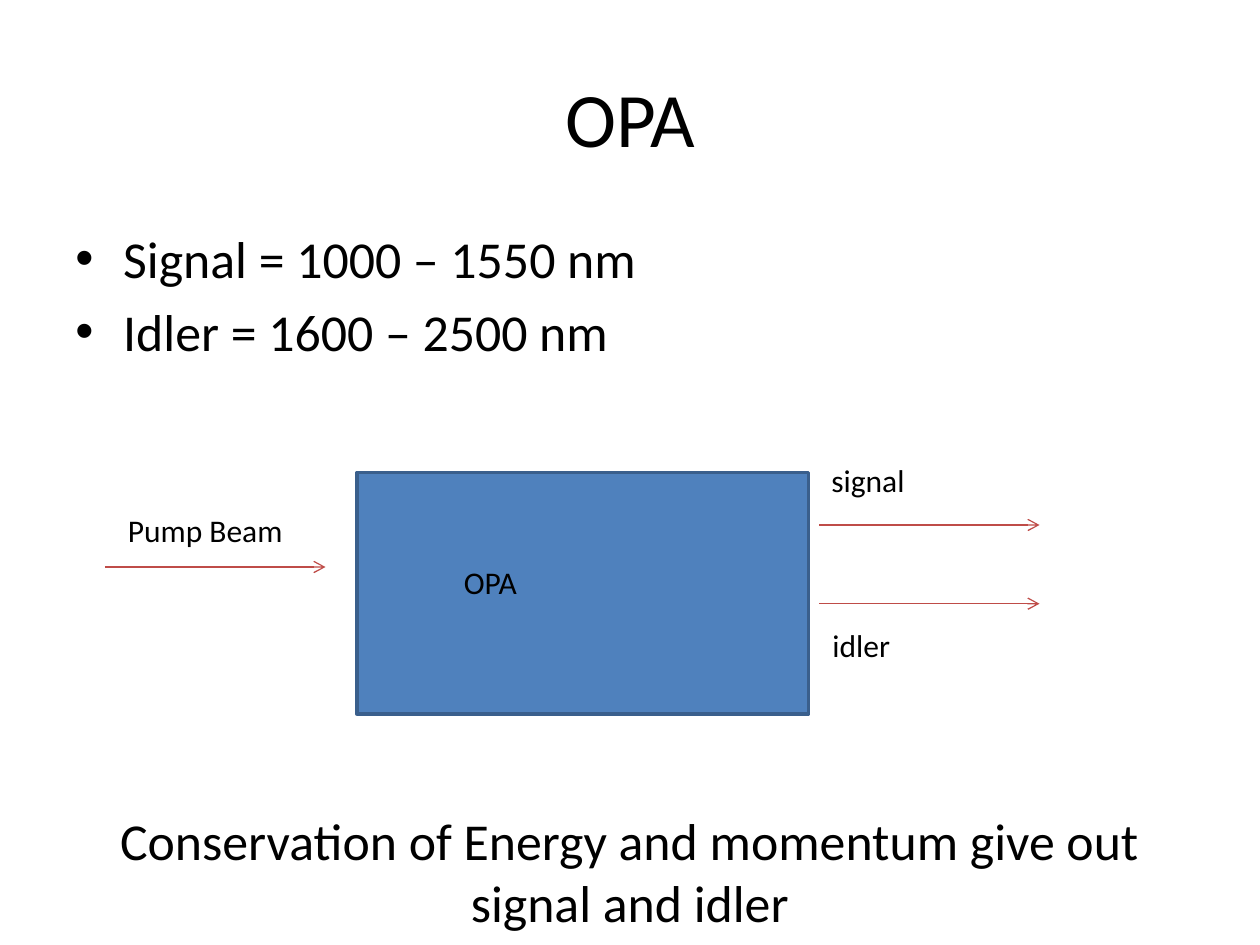
from dataclasses import dataclass

from lxml.etree import SubElement
from pptx import Presentation
from pptx.dml.color import RGBColor
from pptx.enum.shapes import MSO_CONNECTOR, MSO_SHAPE
from pptx.enum.text import MSO_ANCHOR, PP_ALIGN
from pptx.oxml.ns import qn
from pptx.util import Inches, Pt

SLIDE_WIDTH, SLIDE_HEIGHT = Inches(10), Inches(7.5)
COLUMNS, ROWS = 120, 90


@dataclass(frozen=True)
class Theme:
    """Colours, font and type sizes of the slide."""

    font: str = "Calibri"
    text: RGBColor = RGBColor(0x00, 0x00, 0x00)
    crystal: RGBColor = RGBColor(0x4F, 0x81, 0xBD)
    outline: RGBColor = RGBColor(0x3A, 0x5F, 0x8C)
    beam: RGBColor = RGBColor(0xBF, 0x4C, 0x48)
    title_size: float = 44
    body_size: float = 29.6
    label_size: float = 18


THEME = Theme()


def place(column, row, width=0, height=0):
    """Turn grid columns and rows into slide lengths."""
    return (
        int(SLIDE_WIDTH * column / COLUMNS),
        int(SLIDE_HEIGHT * row / ROWS),
        int(SLIDE_WIDTH * width / COLUMNS),
        int(SLIDE_HEIGHT * height / ROWS),
    )


def write(paragraph, text, size, alignment=PP_ALIGN.LEFT):
    """Add one formatted run to a paragraph."""
    paragraph.alignment = alignment
    run = paragraph.add_run()
    run.text = text
    run.font.name = THEME.font
    run.font.size = Pt(size)
    run.font.color.rgb = THEME.text


def add_text_frame(slide, box):
    """Add a wrapping text box and return its text frame."""
    text_frame = slide.shapes.add_textbox(*place(*box)).text_frame
    text_frame.word_wrap = True
    return text_frame


def add_text(slide, box, text, size, alignment=PP_ALIGN.LEFT):
    """Add a text box holding a single paragraph."""
    write(add_text_frame(slide, box).paragraphs[0], text, size, alignment)


def add_title(slide, box, text):
    """Place and format the title placeholder."""
    title = slide.shapes.title
    title.left, title.top, title.width, title.height = place(*box)
    title.text_frame.vertical_anchor = MSO_ANCHOR.MIDDLE
    write(title.text_frame.paragraphs[0], text, THEME.title_size, PP_ALIGN.CENTER)


def add_bullets(slide, box, items):
    """Add a bulleted list with hanging indents."""
    text_frame = add_text_frame(slide, box)
    for index, item in enumerate(items):
        paragraph = text_frame.add_paragraph() if index else text_frame.paragraphs[0]
        write(paragraph, item, THEME.body_size)
        if index:
            paragraph.space_before = Pt(THEME.body_size * 0.2)
        properties = paragraph._p.get_or_add_pPr()
        properties.set("marL", str(Inches(0.38)))
        properties.set("indent", str(-Inches(0.38)))
        SubElement(properties, qn("a:buFont"), typeface="Arial")
        SubElement(properties, qn("a:buChar"), char="•")


def add_beam(slide, column, row, length):
    """Add a horizontal arrow pointing right."""
    left, top, width, _ = place(column, row, length)
    beam = slide.shapes.add_connector(
        MSO_CONNECTOR.STRAIGHT, left, top, left + width, top
    )
    beam.line.color.rgb = THEME.beam
    beam.line.width = Pt(0.75)
    SubElement(beam.line._get_or_add_ln(), qn("a:tailEnd"), type="arrow")
    SubElement(beam._element.spPr, qn("a:effectLst"))


def add_diagram(slide, box):
    """Draw the crystal with its incoming and outgoing beams."""
    left, top, width, height = box
    crystal = slide.shapes.add_shape(
        MSO_SHAPE.RECTANGLE, *place(left + 24, top + 2, 43, height - 2)
    )
    crystal.shadow.inherit = False
    crystal.fill.solid()
    crystal.fill.fore_color.rgb = THEME.crystal
    crystal.line.color.rgb = THEME.outline
    crystal.line.width = Pt(2)
    add_text(slide, (left + 33, top + 10, 23, 4.8), "OPA", THEME.label_size)

    length = 21
    output = left + width - length
    beams = [
        ("Pump Beam", left, top + 11, 1, -5.9),
        ("signal", output, top + 7, 0, -6.7),
        ("idler", output, top + 14.5, 0.1, 1.5),
    ]
    for label, column, row, shift, drop in beams:
        add_beam(slide, column, row, length)
        label_box = (column + shift, row + drop, length, 4.8)
        add_text(slide, label_box, label, THEME.label_size)


def main():
    """Build the slide and save it."""
    presentation = Presentation()
    presentation.slide_width, presentation.slide_height = SLIDE_WIDTH, SLIDE_HEIGHT
    slide = presentation.slides.add_slide(presentation.slide_layouts[5])
    add_title(slide, (6, 3.6, 108, 15), "OPA")
    add_bullets(
        slide,
        (6, 21, 108, 15),
        ["Signal = 1000 – 1550 nm", "Idler = 1600 – 2500 nm"],
    )
    add_diagram(slide, (10, 43, 89, 25))
    add_text(
        slide,
        (6, 76.4, 108, 13.2),
        "Conservation of Energy and momentum give out signal and idler",
        THEME.body_size,
        PP_ALIGN.CENTER,
    )
    presentation.save("out.pptx")


if __name__ == "__main__":
    main()
